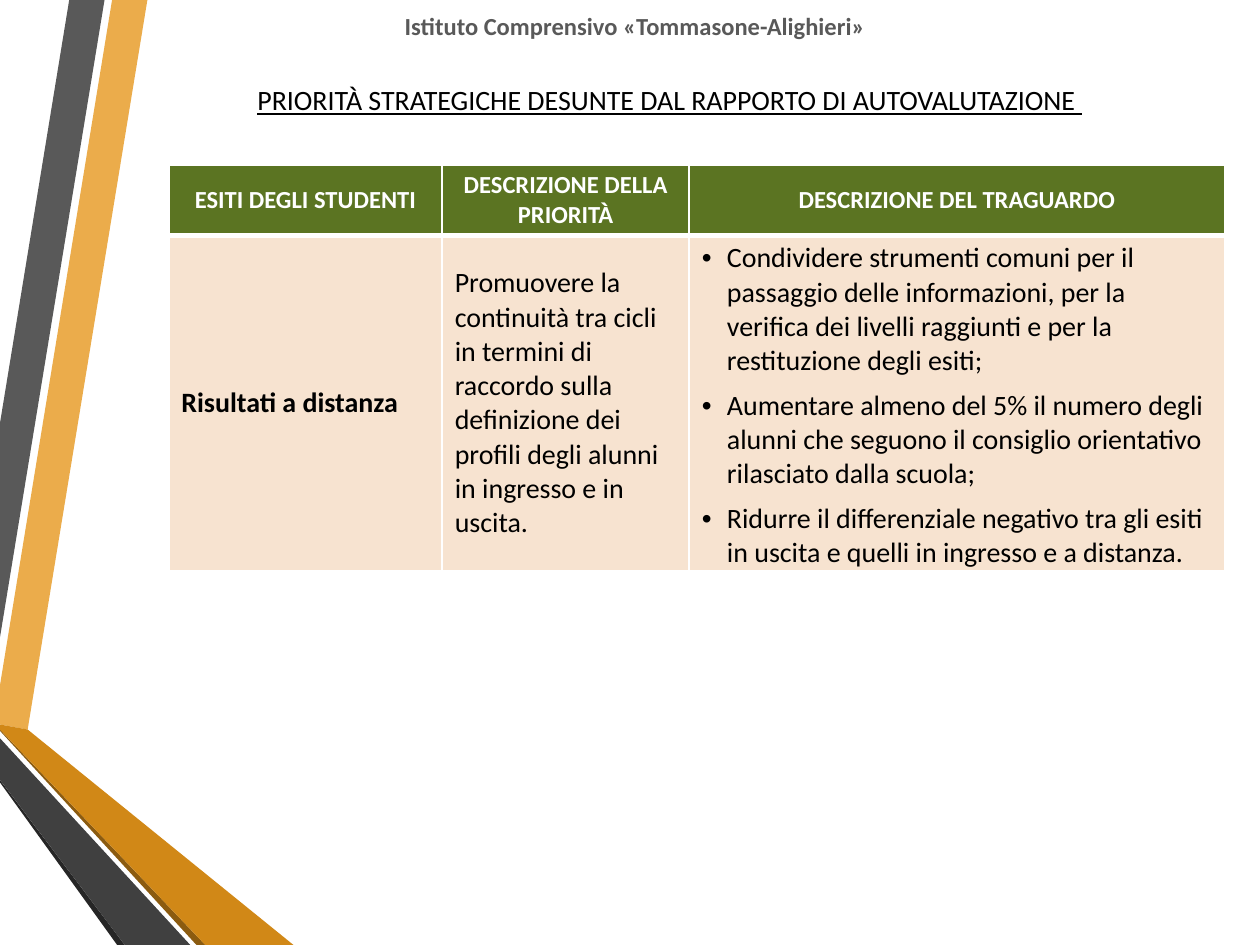
from lxml import etree
from pptx import Presentation
from pptx.dml.color import RGBColor
from pptx.enum import text
from pptx.oxml import ns
from pptx.util import Inches, Pt

WHITE = RGBColor(0xFF, 0xFF, 0xFF)
BLACK = RGBColor(0x00, 0x00, 0x00)
GRAY = RGBColor(0x59, 0x59, 0x59)
CHARCOAL = RGBColor(0x40, 0x40, 0x40)
DARK_EDGE = RGBColor(0x26, 0x26, 0x26)
AMBER = RGBColor(0xEB, 0xAC, 0x4B)
OCHRE = RGBColor(0xD1, 0x88, 0x17)
BROWN = RGBColor(0x8B, 0x5B, 0x10)
GREEN = RGBColor(0x5B, 0x74, 0x22)
PEACH = RGBColor(0xF7, 0xE3, 0xD0)

FONT = "Calibri"
RIBBONS = [
    (AMBER, [(0, 5.44), (0, 5.75), (0.22, 5.79), (1.17, 0), (0.89, 0)]),
    (GRAY, [(0.83, 0), (0.55, 0), (0, 3.36), (0, 5.06)]),
    (DARK_EDGE, [(0, 6.19), (0, 6.21), (0.93, 7.5), (0.99, 7.5)]),
    (BROWN, [(0, 5.79), (0, 5.8), (1.56, 7.5), (1.63, 7.5)]),
    (OCHRE, [(0, 5.79), (1.63, 7.5), (2.33, 7.5), (0.22, 5.79), (0, 5.75)]),
    (CHARCOAL, [(0, 6.19), (0.99, 7.5), (1.51, 7.5), (0, 5.86)]),
]
COLUMNS = [2.17, 1.96, 4.25]
ROWS = [0.56, 2.66]
HEADINGS = ["ESITI DEGLI STUDENTI", "DESCRIZIONE DELLA PRIORITÀ", "DESCRIZIONE DEL TRAGUARDO"]
OUTCOME = "Risultati a distanza"
PRIORITY = (
    "Promuovere la continuità tra cicli in termini di raccordo sulla definizione "
    "dei profili degli alunni in ingresso e in uscita."
)
TARGETS = [
    "Condividere strumenti comuni per il passaggio delle informazioni, per la verifica "
    "dei livelli raggiunti e per la restituzione degli esiti;",
    "Aumentare almeno del 5% il numero degli alunni che seguono il consiglio orientativo "
    "rilasciato dalla scuola;",
    "Ridurre il differenziale negativo tra gli esiti in uscita e quelli in ingresso e a distanza.",
]


def style_text(frame, size, color, bold=False, underline=False, align=text.PP_ALIGN.LEFT):
    """Format every paragraph and run of a text frame."""
    for para in frame.paragraphs:
        para.alignment = align
        for span in para.runs:
            span.font.name = FONT
            span.font.size = Pt(size)
            span.font.color.rgb = color
            span.font.bold = bold
            span.font.underline = underline


def add_ribbons(page, left, top):
    """Draw the folded ribbons along the left edge."""
    for color, points in RIBBONS:
        corners = [(left + Inches(x), top + Inches(y)) for x, y in points]
        builder = page.shapes.build_freeform(*corners[0])
        builder.add_line_segments(corners[1:], close=True)
        ribbon = builder.convert_to_shape()
        ribbon.shadow.inherit = False
        ribbon.fill.solid()
        ribbon.fill.fore_color.rgb = color
        ribbon.line.fill.background()


def add_heading(page, left, top, width, height, wording, **style):
    """Add a centred line of text."""
    box = page.shapes.add_textbox(left, top, width, height)
    box.text_frame.word_wrap = True
    box.text_frame.text = wording
    style_text(box.text_frame, align=text.PP_ALIGN.CENTER, **style)


def set_borders(cell, bottom):
    """Give a cell white borders, with its own bottom width in points."""
    properties = cell._tc.get_or_add_tcPr()
    for index, (side, width) in enumerate([("L", 1), ("R", 1), ("T", 1), ("B", bottom)]):
        line = etree.Element(ns.qn(f"a:ln{side}"), w=str(Pt(width)))
        fill = etree.SubElement(line, ns.qn("a:solidFill"))
        etree.SubElement(fill, ns.qn("a:srgbClr"), val=str(WHITE))
        properties.insert(index, line)


def fill_cell(cell, wording, background, bottom, **style):
    """Write and format one table cell."""
    cell.text = wording
    cell.vertical_anchor = text.MSO_ANCHOR.MIDDLE
    cell.margin_top = cell.margin_bottom = Inches(0.04)
    cell.fill.solid()
    cell.fill.fore_color.rgb = background
    set_borders(cell, bottom)
    style_text(cell.text_frame, **style)


def add_bullets(frame):
    """Turn the paragraphs of a text frame into a bulleted list."""
    for para in frame.paragraphs:
        para.space_after = Pt(6)
        properties = para._p.get_or_add_pPr()
        properties.set("marL", str(Inches(0.2)))
        properties.set("indent", str(-Inches(0.2)))
        etree.SubElement(properties, ns.qn("a:buFont"), typeface="Arial")
        etree.SubElement(properties, ns.qn("a:buChar"), char="•")


def add_priorities(page, left, top, width, height):
    """Add the table of outcomes, priorities and targets."""
    table = page.shapes.add_table(len(ROWS), len(COLUMNS), left, top, width, height).table
    for column, size in zip(table.columns, COLUMNS):
        column.width = Inches(size)
    for row, size in zip(table.rows, ROWS):
        row.height = Inches(size)
    for index, heading in enumerate(HEADINGS):
        fill_cell(table.cell(0, index), heading, GREEN, 3, size=14, color=WHITE, bold=True,
                  align=text.PP_ALIGN.CENTER)
    for index, wording in enumerate([OUTCOME, PRIORITY, "\n".join(TARGETS)]):
        fill_cell(table.cell(1, index), wording, PEACH, 1, size=16, color=BLACK, bold=index == 0)
    targets = table.cell(1, 2)
    targets.margin_bottom = 0
    add_bullets(targets.text_frame)


def main():
    """Build and save the deck."""
    deck = Presentation()
    deck.slide_width, deck.slide_height = Inches(10), Inches(7.5)
    page = deck.slides.add_slide(deck.slide_layouts[6])
    add_ribbons(page, 0, 0)
    add_priorities(page, Inches(1.34), Inches(1.31), Inches(sum(COLUMNS)), Inches(sum(ROWS)))
    add_heading(page, Inches(1.14), Inches(0.04), Inches(7.8), Inches(0.34),
                "Istituto Comprensivo «Tommasone-Alighieri»", size=14, color=GRAY, bold=True)
    add_heading(page, Inches(1.22), Inches(0.61), Inches(8.19), Inches(0.37),
                "PRIORITÀ STRATEGICHE DESUNTE DAL RAPPORTO DI AUTOVALUTAZIONE ",
                size=16, color=BLACK, underline=True)
    deck.save("out.pptx")


if __name__ == "__main__":
    main()
